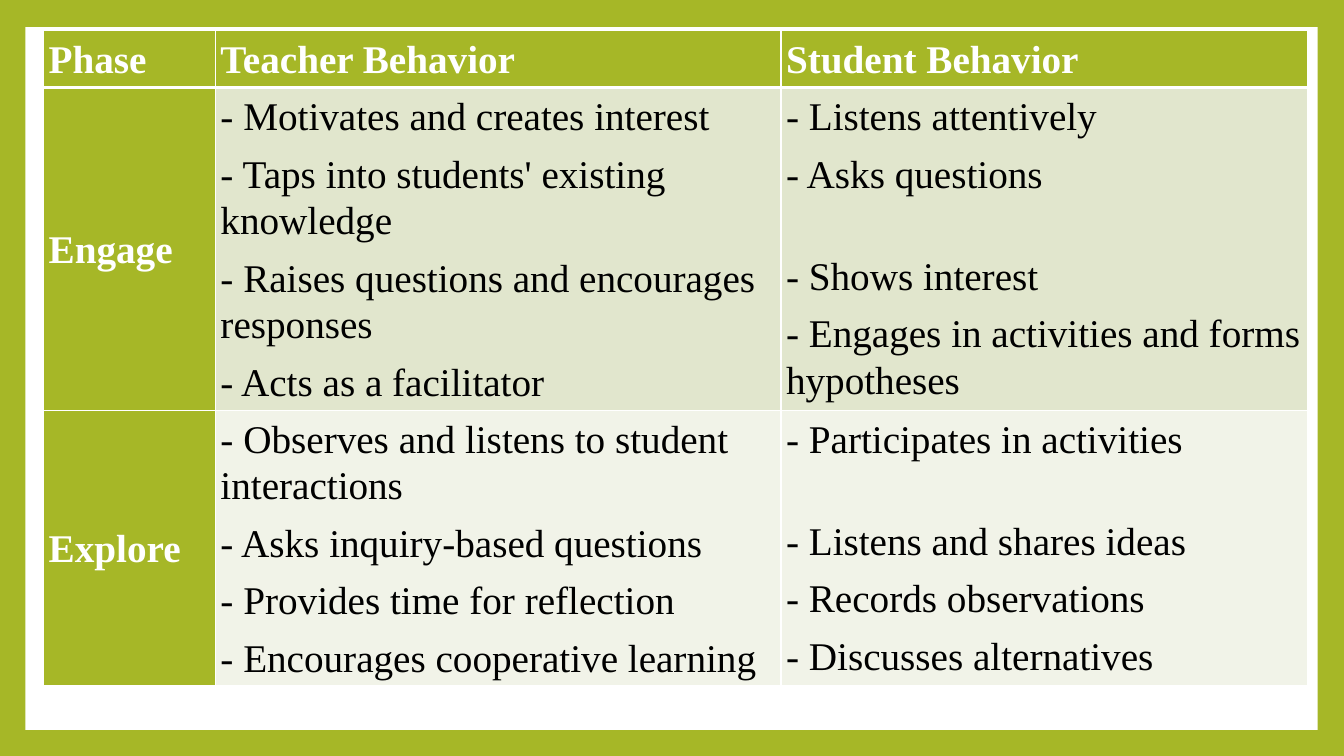
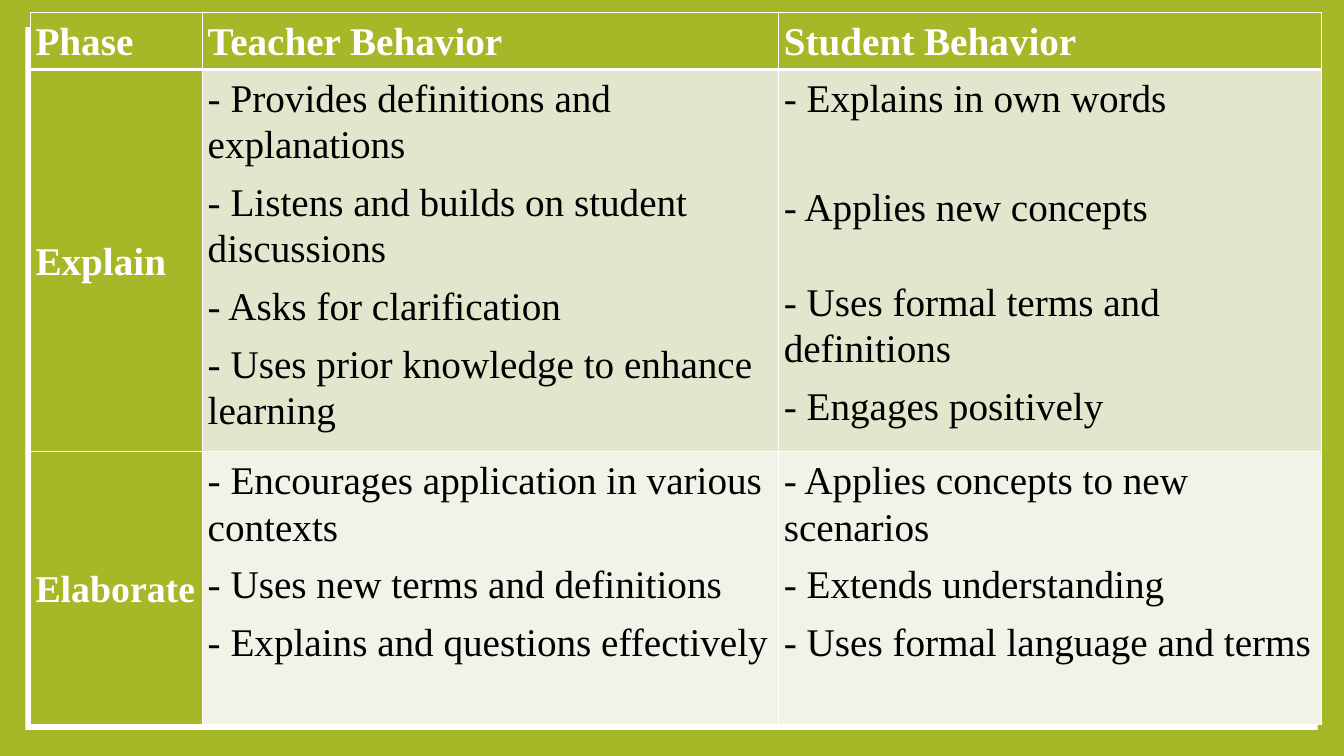
import pptx
import pptx.dml.color
import pptx.enum.shapes
import pptx.enum.text
import pptx.oxml
import pptx.oxml.ns
import pptx.util

Pt = pptx.util.Pt

COLORS = {
    "green": "A6B727",
    "white": "FFFFFF",
    "black": "000000",
    "first_band": "E1E6CD",
    "second_band": "F1F3E8",
}
FONT = "Times New Roman"
TEXT_SIZE = 28
SPACE_AFTER = 8
CELL_MARGIN = 3.6
THIN, THICK = 1, 3
PANEL_BOX = (18.2, 19.4, 923, 502)
HEADINGS = ("Phase", "Teacher Behavior", "Student Behavior")

# Each phase: name, name size, teacher items, student items.
# An item may be a pair: text and the space after it.
TABLES = [
    {
        "box": (31.2, 21.7, 903, 468.4),
        "columns": (122.7, 404),
        "rows": (40.9, 230.5),
        "phases": [
            ("Engage", 28,
             ["- Motivates and creates interest",
              "- Taps into students' existing knowledge",
              "- Raises questions and encourages responses",
              "- Acts as a facilitator"],
             ["- Listens attentively",
              ("- Asks questions", 39.7),
              "- Shows interest",
              "- Engages in activities and forms hypotheses"]),
            ("Explore", 28,
             ["- Observes and listens to student interactions",
              "- Asks inquiry-based questions",
              "- Provides time for reflection",
              "- Encourages cooperative learning"],
             [("- Participates in activities", 39.7),
              "- Listens and shares ideas",
              "- Records observations",
              "- Discusses alternatives"]),
        ],
    },
    {
        "box": (21.8, 9, 922.2, 508.6),
        "columns": (123, 411.5),
        "rows": (40.6, 273),
        "phases": [
            ("Explain", 28,
             ["- Provides definitions and explanations",
              "- Listens and builds on student discussions",
              "- Asks for clarification",
              "- Uses prior knowledge to enhance learning"],
             [("- Explains in own words", 44.4),
              ("- Applies new concepts", 35),
              "- Uses formal terms and definitions",
              "- Engages positively"]),
            ("Elaborate", 27,
             ["- Encourages application in various contexts",
              "- Uses new terms and definitions",
              "- Explains and questions effectively"],
             ["- Applies concepts to new scenarios",
              "- Extends understanding",
              "- Uses formal language and terms"]),
        ],
    },
]


def rgb(name):
    return pptx.dml.color.RGBColor.from_string(COLORS[name])


def paint(fill, name):
    fill.solid()
    fill.fore_color.rgb = rgb(name)


def add_panel(slide, box):
    """White panel that leaves a green frame around the slide."""
    panel = slide.shapes.add_shape(
        pptx.enum.shapes.MSO_SHAPE.RECTANGLE, *(Pt(length) for length in box))
    panel.shadow.inherit = False
    paint(panel.fill, "white")
    panel.line.fill.background()


def set_borders(cell, top, bottom):
    properties = cell._tc.get_or_add_tcPr()
    for side, width in (("L", THIN), ("R", THIN), ("T", top), ("B", bottom)):
        properties.append(pptx.oxml.parse_xml(
            f'<a:ln{side} {pptx.oxml.ns.nsdecls("a")} w="{Pt(width)}">'
            f'<a:solidFill><a:srgbClr val="{COLORS["white"]}"/></a:solidFill>'
            f'</a:ln{side}>'))


def fill_cell(cell, items, fill, label=False, size=TEXT_SIZE):
    """Write items as paragraphs; labels are bold, white and centred vertically."""
    paint(cell.fill, fill)
    cell.margin_left = cell.margin_right = Pt(CELL_MARGIN)
    cell.margin_top = cell.margin_bottom = Pt(CELL_MARGIN)
    anchors = pptx.enum.text.MSO_ANCHOR
    cell.vertical_anchor = anchors.MIDDLE if label else anchors.TOP
    frame = cell.text_frame
    for index, item in enumerate(items):
        text, space = item if isinstance(item, tuple) else (item, SPACE_AFTER)
        paragraph = frame.add_paragraph() if index else frame.paragraphs[0]
        paragraph.line_spacing = 1.07
        paragraph.space_after = Pt(space)
        run = paragraph.add_run()
        run.text = text
        run.font.name = FONT
        run.font.size = Pt(size)
        run.font.bold = label
        run.font.color.rgb = rgb("white" if label else "black")


def add_phase_table(slide, box, columns, rows, phases):
    """The last column and the last row take what is left of the box."""
    left, top, width, height = box
    table = slide.shapes.add_table(
        len(phases) + 1, len(HEADINGS), Pt(left), Pt(top), Pt(width), Pt(height)).table
    table.horz_banding = False
    for column, size in zip(table.columns, (*columns, width - sum(columns))):
        column.width = Pt(size)
    for row, size in zip(table.rows, (*rows, height - sum(rows))):
        row.height = Pt(size)

    # Borders, with a heavy rule under the headings
    for row_index, row in enumerate(table.rows):
        for cell in row.cells:
            set_borders(cell, THICK if row_index == 1 else THIN,
                        THICK if row_index == 0 else THIN)

    # Headings
    for column_index, heading in enumerate(HEADINGS):
        fill_cell(table.cell(0, column_index), [heading], "green", label=True)

    # Phases
    bands = ("first_band", "second_band")
    for row_index, (name, size, teacher, student) in enumerate(phases, 1):
        band = bands[(row_index - 1) % 2]
        fill_cell(table.cell(row_index, 0), [name], "green", label=True, size=size)
        fill_cell(table.cell(row_index, 1), teacher, band)
        fill_cell(table.cell(row_index, 2), student, band)


def main():
    presentation = pptx.Presentation()
    presentation.slide_width, presentation.slide_height = Pt(960), Pt(540)
    paint(presentation.slide_master.background.fill, "green")
    blank_layout = presentation.slide_layouts[6]
    for content in TABLES:
        slide = presentation.slides.add_slide(blank_layout)
        add_panel(slide, PANEL_BOX)
        add_phase_table(slide, **content)
    presentation.save("out.pptx")


if __name__ == "__main__":
    main()
